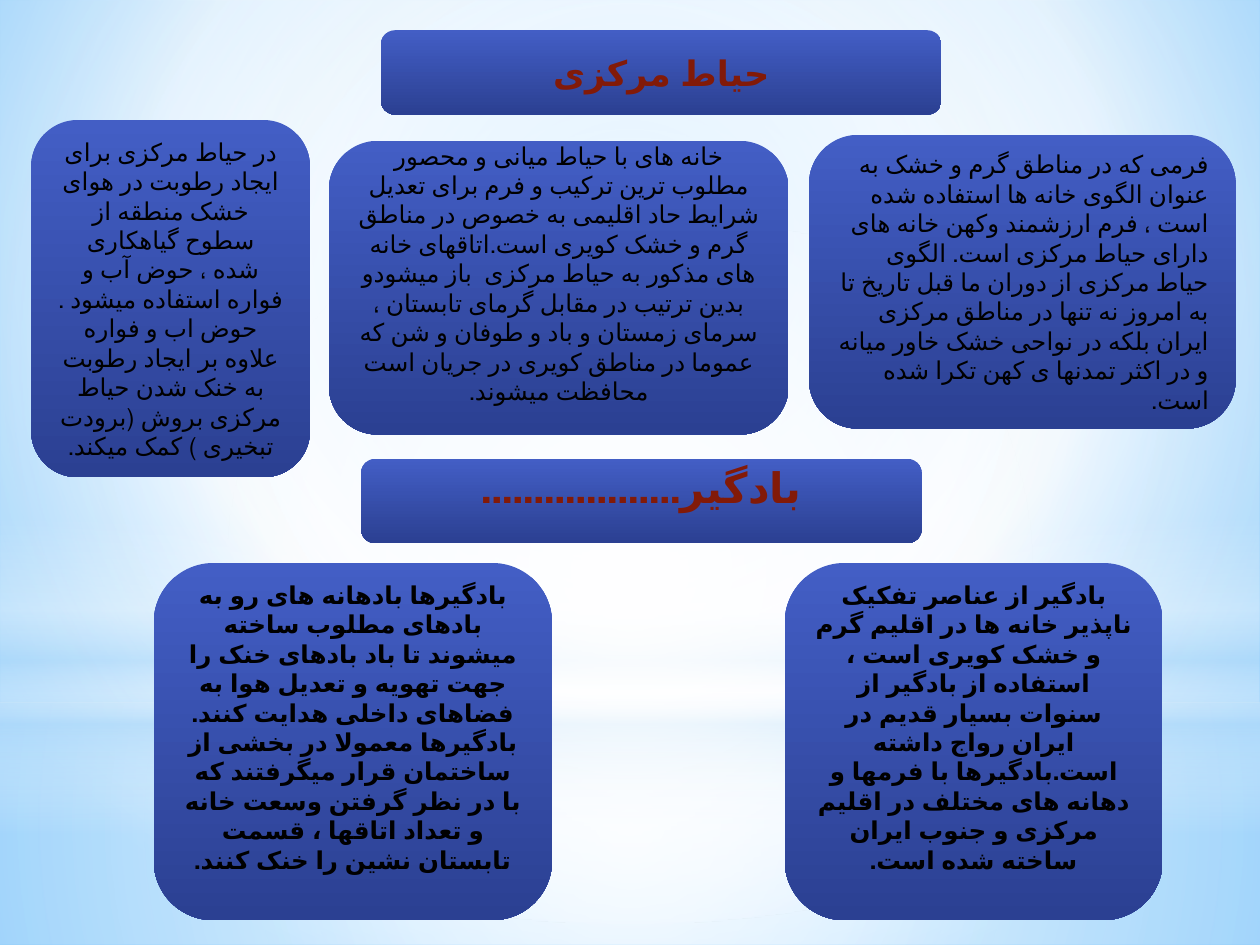
from lxml.etree import SubElement
from pptx import Presentation
from pptx.dml.color import RGBColor
from pptx.enum.shapes import MSO_SHAPE
from pptx.enum.text import MSO_ANCHOR, PP_ALIGN
from pptx.oxml.ns import qn
from pptx.util import Cm, Pt

FONT = "Roboto"
LANGUAGE = "fa-IR"
COLORS = {"white": "FFFFFF", "haze": "B4DCFA", "sky": "9ED5FF", "deep_sky": "5BB9FF",
          "card_top": "435EC5", "card_bottom": "2B4092", "title": "821A08", "body": "000000"}

WIDTH, HEIGHT = 25.4, 19.05
CENTER = (50, 50, 50, 50)

# Gradient stops: position, colour, opacity (percent)
SKY_STOPS = [(0, "sky", 100), (60, "white", 100), (100, "deep_sky", 100)]
CARD_STOPS = [(0, "card_top", 100), (100, "card_bottom", 100)]

# Backdrop layers: shape, top, height, stops, focus (None for a vertical gradient)
LAYERS = [
    (MSO_SHAPE.RECTANGLE, 14.17, 4.88,
     [(0, "white", 91), (37, "white", 76), (100, "haze", 79)], CENTER),
    (MSO_SHAPE.RECTANGLE, 0, 14.17,
     [(0, "white", 89), (48, "white", 62), (100, "haze", 79)], CENTER),
    (MSO_SHAPE.RECTANGLE, 10.46, 6.35,
     [(0, "white", 0), (29, "white", 30), (45, "haze", 40),
      (55, "white", 26), (65, "haze", 60), (100, "white", 0)], None),
    (MSO_SHAPE.OVAL, 4.45, 14.17, [(0, "white", 100), (56, "white", 0)], CENTER),
]

# Text styles: colour, bold, alignment
TITLE = ("title", True, PP_ALIGN.CENTER)
STRONG = ("body", True, PP_ALIGN.CENTER)
PLAIN = ("body", False, PP_ALIGN.CENTER)
PLAIN_RIGHT = ("body", False, PP_ALIGN.RIGHT)

INSET = 0.13
RAISED = 0.72  # bottom inset that lifts the text by half a line

# Cards: left, top, width, height, bottom inset, size, style, text
CARDS = [
    (7.68, 0.61, 11.3, 1.7, INSET, 20, TITLE, "حیاط مرکزی"),
    (7.28, 9.25, 11.3, 1.7, RAISED, 24, TITLE, "بادگیر..................."),
    (15.82, 11.35, 7.62, 7.2, RAISED, 14, STRONG,
     "بادگیر از عناصر تفکیک ناپذیر خانه ها در اقلیم گرم و خشک کویری است ، "
     "استفاده از بادگیر از سنوات بسیار قدیم در ایران رواج داشته است.بادگیرها با "
     "فرمها و دهانه های مختلف در اقلیم مرکزی و جنوب ایران ساخته شده است."),
    (3.1, 11.35, 8.03, 7.2, RAISED, 14, STRONG,
     "بادگیرها بادهانه های رو به بادهای مطلوب ساخته میشوند تا باد بادهای خنک را "
     "جهت تهویه و تعدیل هوا به فضاهای داخلی هدایت کنند. بادگیرها معمولا در بخشی از "
     "ساختمان قرار میگرفتند که با در نظر گرفتن وسعت خانه و تعداد اتاقها ، قسمت "
     "تابستان نشین را خنک کنند."),
    (16.31, 2.72, 8.6, 5.92, INSET, 14, PLAIN_RIGHT,
     "فرمی که در مناطق گرم و خشک به عنوان الگوی خانه ها استفاده شده است ، فرم "
     "ارزشمند وکهن خانه های دارای حیاط مرکزی است. الگوی حیاط مرکزی از دوران ما قبل "
     "تاریخ تا به امروز نه تنها در مناطق مرکزی ایران بلکه در نواحی خشک خاور میانه و "
     "در اکثر تمدنها ی کهن تکرا شده است."),
    (6.63, 2.84, 9.27, 5.92, RAISED, 14, PLAIN,
     "خانه های با حیاط میانی و محصور مطلوب ترین ترکیب و فرم برای تعدیل شرایط حاد "
     "اقلیمی به خصوص در مناطق گرم و خشک کویری است.اتاقهای خانه های مذکور به حیاط "
     "مرکزی  باز میشودو بدین ترتیب در مقابل گرمای تابستان ، سرمای زمستان و باد و "
     "طوفان و شن که عموما در مناطق کویری در جریان است محافظت میشوند."),
    (0.63, 2.42, 5.62, 7.2, INSET, 14, PLAIN,
     "در حیاط مرکزی برای ایجاد رطوبت در هوای خشک منطقه از سطوح گیاهکاری شده ، حوض "
     "آب و فواره استفاده میشود . حوض اب و فواره علاوه بر ایجاد رطوبت به خنک شدن "
     "حیاط مرکزی بروش (برودت تبخیری ) کمک میکند."),
]


def paint(owner, fill, stops, focus=None):
    """Fill with a gradient: circular around focus, or top to bottom."""
    fill.gradient()
    gradient = owner.find(".//" + qn("a:gradFill"))
    for child in list(gradient):
        gradient.remove(child)
    stop_list = SubElement(gradient, qn("a:gsLst"))
    for position, color, opacity in stops:
        stop = SubElement(stop_list, qn("a:gs"), pos=str(position * 1000))
        tint = SubElement(stop, qn("a:srgbClr"), val=COLORS[color])
        if opacity < 100:
            SubElement(tint, qn("a:alpha"), val=str(opacity * 1000))
    if focus:
        circle = SubElement(gradient, qn("a:path"), path="circle")
        edges = {side: str(part * 1000) for side, part in zip("ltrb", focus)}
        SubElement(circle, qn("a:fillToRect"), **edges)
    else:
        SubElement(gradient, qn("a:lin"), ang="5400000", scaled="0")


def add_panel(page, kind, place, stops, focus=None):
    panel = page.shapes.add_shape(kind, *[Cm(length) for length in place])
    panel.shadow.inherit = False
    panel.line.fill.background()
    paint(panel.element.spPr, panel.fill, stops, focus)
    return panel


def write(panel, text, size, style, bottom):
    color, bold, alignment = style
    frame = panel.text_frame
    frame.word_wrap = True
    frame.vertical_anchor = MSO_ANCHOR.MIDDLE
    frame.margin_top, frame.margin_bottom = Cm(INSET), Cm(bottom)
    frame.text = text
    para = frame.paragraphs[0]
    para.alignment = alignment
    para._p.get_or_add_pPr().set("rtl", "1")
    span = para.runs[0]
    span.font.size, span.font.bold, span.font.name = Pt(size), bold, FONT
    span.font.color.rgb = RGBColor.from_string(COLORS[color])
    span.font._element.set("lang", LANGUAGE)


deck = Presentation()
deck.slide_width, deck.slide_height = Cm(WIDTH), Cm(HEIGHT)
page = deck.slides.add_slide(deck.slide_layouts[6])

# Backdrop
paint(page.element, page.background.fill, SKY_STOPS, (20, 10, 20, 60))
for kind, top, height, stops, focus in LAYERS:
    add_panel(page, kind, (0, top, WIDTH, height), stops, focus)

# Titles and text cards
for *place, bottom, size, style, text in CARDS:
    card = add_panel(page, MSO_SHAPE.ROUNDED_RECTANGLE, place, CARD_STOPS)
    write(card, text, size, style, bottom)

deck.save("out.pptx")
